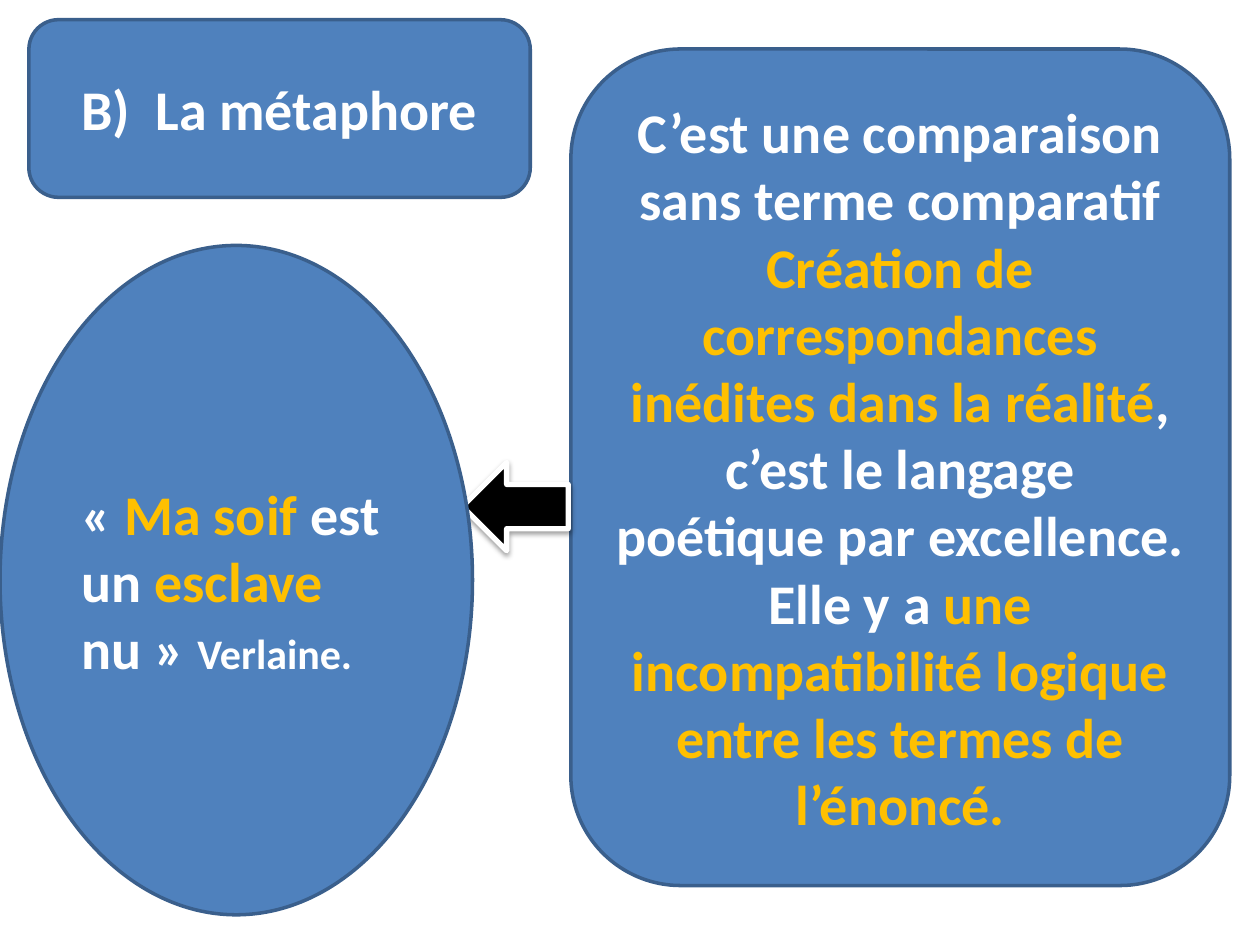
from lxml import etree
from pptx import Presentation
from pptx.dml.color import RGBColor
from pptx.enum import shapes, text
from pptx.oxml import ns
from pptx.util import Pt

BLUE = RGBColor(0x4F, 0x81, 0xBD)
EDGE = RGBColor(0x3A, 0x5F, 0x8C)
WHITE = RGBColor(255, 255, 255)
GOLD = RGBColor(0xFF, 0xC0, 0)
BLACK = RGBColor(0, 0, 0)
KIND = shapes.MSO_SHAPE
SIDE = text.PP_ALIGN

deck = Presentation()
deck.slide_width, deck.slide_height = Pt(720), Pt(540)
slide = deck.slides.add_slide(deck.slide_layouts[6])


def draw(kind, box, fill, edge, width):
    shape = slide.shapes.add_shape(kind, *[Pt(n) for n in box])
    shape.shadow.inherit = False
    shape.fill.solid()
    shape.fill.fore_color.rgb = fill
    shape.line.color.rgb = edge
    shape.line.width = Pt(width)
    return shape


def label(shape, side, parts):
    frame = shape.text_frame
    frame.word_wrap = True
    frame.vertical_anchor = text.MSO_ANCHOR.MIDDLE
    para = frame.paragraphs[0]
    para.alignment = side
    para.font.name = "Calibri"
    para.font.bold = True
    for words, color, size in parts:
        run = para.add_run()
        run.text = words
        run.font.size = Pt(size)
        run.font.color.rgb = color


title = draw(KIND.ROUNDED_RECTANGLE, (16.5, 11.25, 286.5, 101.5), BLUE, EDGE, 2)
label(title, SIDE.CENTER, [("B)  La métaphore", WHITE, 32)])

rule = draw(KIND.ROUNDED_RECTANGLE, (326.25, 28, 376.5, 478), BLUE, EDGE, 2)
label(rule, SIDE.CENTER, [
    ("C’est une comparaison sans terme comparatif", WHITE, 32),
    (" Création de correspondances inédites dans la réalité", GOLD, 32),
    (", c’est le langage poétique par excellence. Elle y a ", WHITE, 32),
    ("une incompatibilité logique entre les termes de l’énoncé.", GOLD, 32),
])

arrow = draw(KIND.DOWN_ARROW, (269.25, 259.25, 50.5, 60.5), BLACK, WHITE, 3)
arrow.rotation = 90
effect = arrow._element.spPr.find(ns.qn("a:effectLst"))
shade = etree.SubElement(effect, ns.qn("a:outerShdw"), blurRad=str(Pt(3.1)),
                         dist=str(Pt(1.6)), dir="5400000", rotWithShape="0")
tint = etree.SubElement(shade, ns.qn("a:srgbClr"), val=str(BLACK))
etree.SubElement(tint, ns.qn("a:alpha"), val="38000")

quote = draw(KIND.OVAL, (0, 140.25, 270, 382.5), BLUE, EDGE, 2)
label(quote, SIDE.LEFT, [
    ("« ", WHITE, 32),
    ("Ma soif ", GOLD, 32),
    ("est un ", WHITE, 32),
    ("esclave", GOLD, 32),
    (" nu » ", WHITE, 32),
    ("Verlaine.", WHITE, 24),
])

deck.save("out.pptx")
